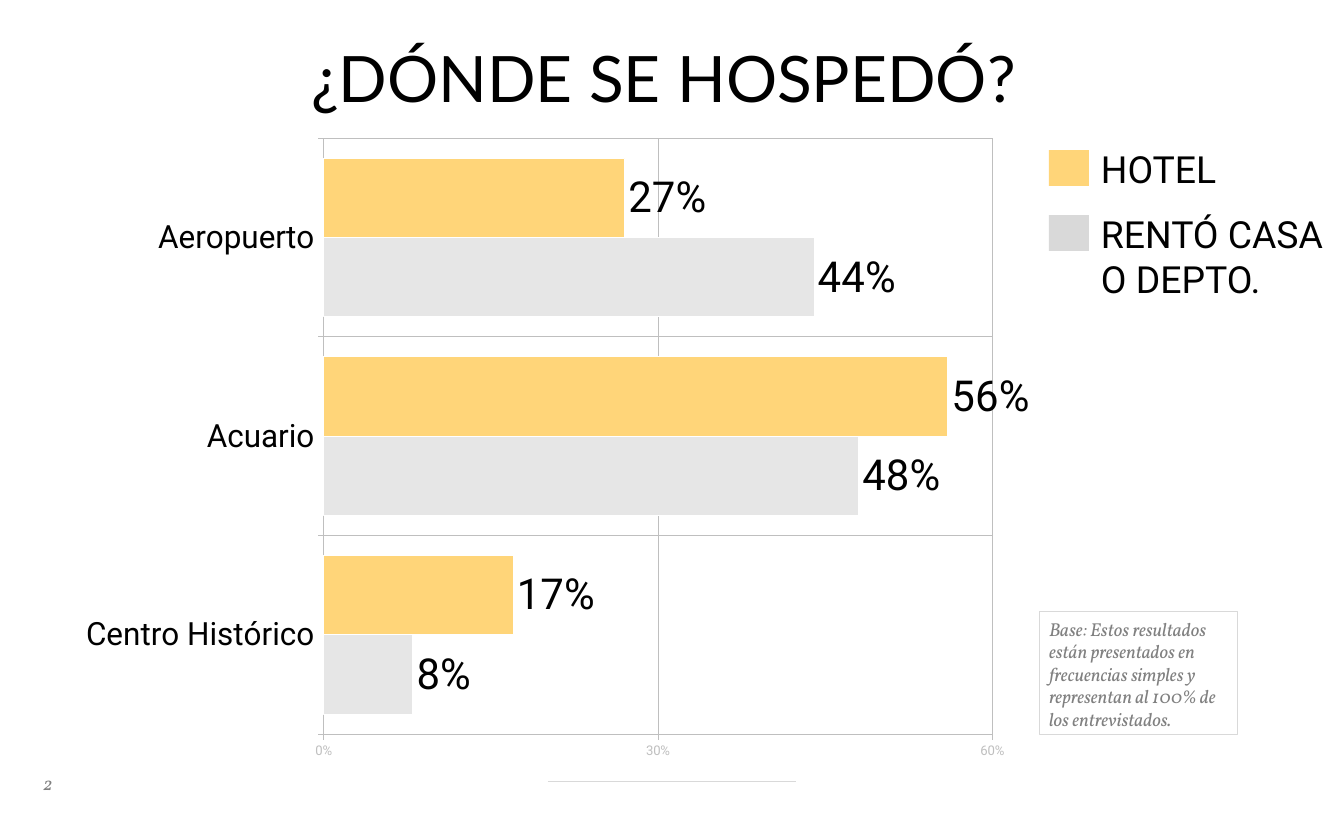
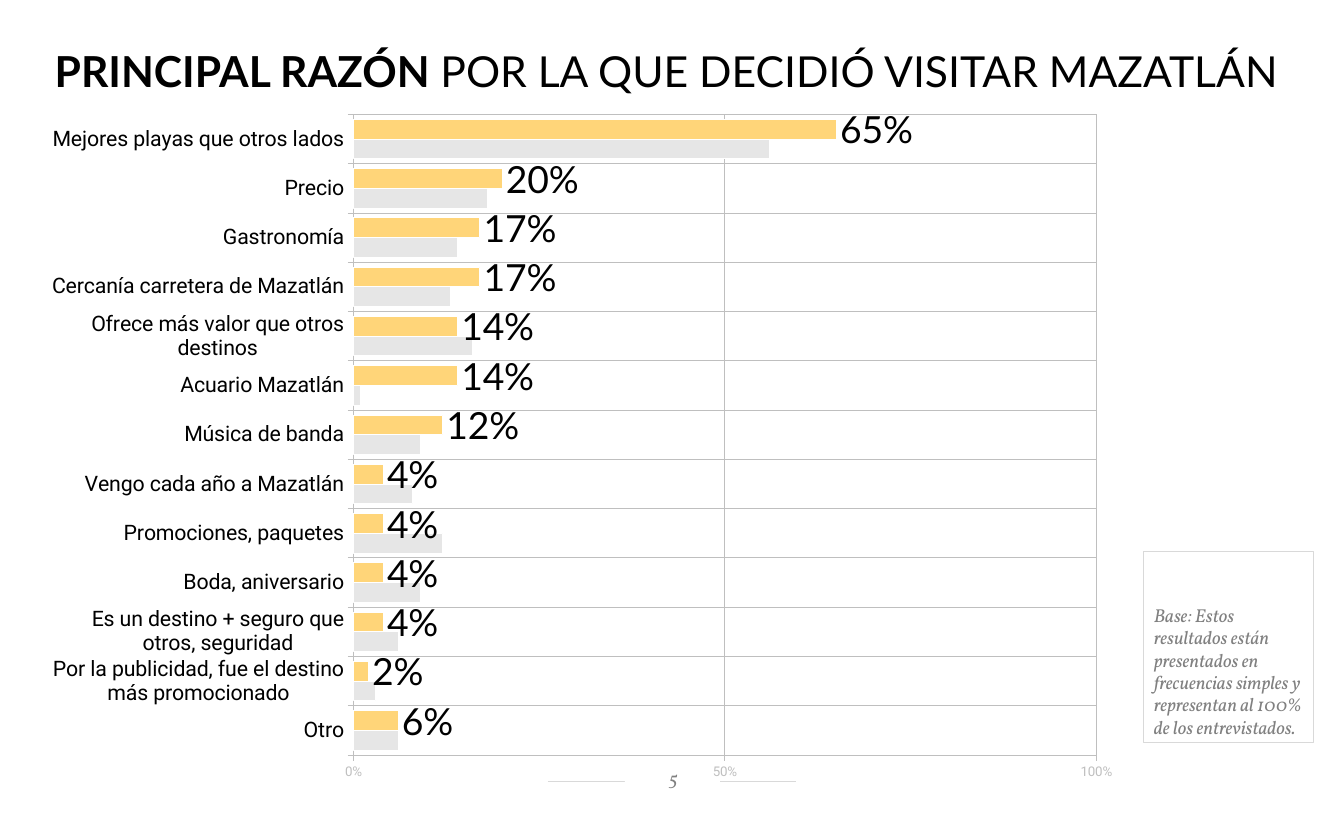
from collections import namedtuple
from dataclasses import dataclass

from lxml.etree import SubElement
from pptx import Presentation
from pptx.chart.data import CategoryChartData as Data
from pptx.dml.color import RGBColor as RGB
from pptx.enum.chart import XL_CHART_TYPE as Kind
from pptx.enum.chart import XL_LABEL_POSITION as Spot
from pptx.enum.chart import XL_TICK_LABEL_POSITION as Side
from pptx.enum.chart import XL_TICK_MARK as Tick
from pptx.enum.shapes import MSO_CONNECTOR as Wire
from pptx.enum.shapes import MSO_SHAPE as Form
from pptx.enum.text import MSO_ANCHOR as Anchor
from pptx.enum.text import MSO_AUTO_SIZE as Fit
from pptx.enum.text import PP_ALIGN as Align
from pptx.oxml.ns import qn
from pptx.util import Emu, Pt

PX = 9525
Box = namedtuple("Box", "x y w h")


@dataclass(frozen=True)
class Theme:
    """Colours, fonts and type sizes of the deck."""
    ink: str = "000000"
    white: str = "FFFFFF"
    gold: str = "FFD579"
    pale: str = "E6E6E6"
    rule: str = "D9D9D9"
    grid: str = "BFBFBF"
    mute: str = "808080"
    head: str = "Lato"
    body: str = "Roboto"
    serif: str = "Vollkorn"
    small: int = 14
    key: int = 28
    axis: int = 10


T = Theme()
PLOT = {"x": 0.288, "y": 0.027, "w": 0.691, "h": 0.934}
PAD = (10, 5, 10, 5)
NOTE = ("Base: Estos resultados están presentados en frecuencias simples "
        "y representan al 100% de los entrevistados.")
STAYS = {
    "Centro Histórico": (0.08, 0.17),
    "Acuario": (0.48, 0.56),
    "Aeropuerto": (0.44, 0.27),
}
REASONS = {
    "Otro": (0.06, 0.06),
    "Por la publicidad, fue el destino más promocionado": (0.03, 0.02),
    "Es un destino + seguro que otros, seguridad": (0.06, 0.04),
    "Boda, aniversario": (0.09, 0.04),
    "Promociones, paquetes": (0.12, 0.04),
    "Vengo cada año a Mazatlán": (0.08, 0.04),
    "Música de banda": (0.09, 0.12),
    "Acuario Mazatlán": (0.01, 0.14),
    "Ofrece más valor que otros destinos": (0.16, 0.14),
    "Cercanía carretera de Mazatlán": (0.13, 0.17),
    "Gastronomía": (0.14, 0.17),
    "Precio": (0.18, 0.2),
    "Mejores playas que otros lados": (0.56, 0.65),
}


def put(item, **vals):
    """Set each named attribute on an object."""
    for name, val in vals.items():
        setattr(item, name, val)


def px(*nums):
    """Turn pixels into EMU."""
    return [Emu(round(num * PX)) for num in nums]


def ink(font, size, face, color=T.ink, **more):
    """Format a font."""
    put(font, size=Pt(size), name=face, **more)
    font.color.rgb = RGB.from_string(color)


def edge(line, color, width=0.75):
    """Give a line its colour and width."""
    line.color.rgb = RGB.from_string(color)
    line.width = Pt(width)


def block(slide, box, fill=None, line=None):
    """Add a flat rectangle."""
    shape = slide.shapes.add_shape(Form.RECTANGLE, *px(*box))
    shape.shadow.inherit = False
    if fill:
        shape.fill.solid()
        shape.fill.fore_color.rgb = RGB.from_string(fill)
    else:
        shape.fill.background()
    if line:
        edge(shape.line, line)
    else:
        shape.line.fill.background()
    return shape


def write(shape, runs, look, align=Align.LEFT, anchor=Anchor.TOP,
          pad=PAD, fit=Fit.SHAPE_TO_FIT_TEXT, lead=None):
    """Fill a shape with one paragraph of (text, bold) runs."""
    left, top, right, low = px(*pad)
    frame = shape.text_frame
    put(frame, word_wrap=True, auto_size=fit, vertical_anchor=anchor,
        margin_left=left, margin_top=top, margin_right=right,
        margin_bottom=low)
    para = frame.paragraphs[0]
    put(para, alignment=align, line_spacing=lead)
    for text, bold in runs:
        run = para.add_run()
        run.text = text
        ink(run.font, bold=bold, **look)


def label(slide, box, runs, look, **more):
    """Add a text box."""
    write(slide.shapes.add_textbox(*px(*box)), runs, look, **more)


def title(slide, box, runs, size, **more):
    """Add a centred heading."""
    label(slide, box, runs, {"size": size, "face": T.head},
          align=Align.CENTER, **more)


def aside(slide, box, text, fill=None, line=None, **more):
    """Add a box of small grey italics."""
    look = {"size": T.small, "face": T.serif, "color": T.mute,
            "italic": True}
    write(block(slide, box, fill, line), [(text, False)], look, **more)


def note(slide, box):
    """Add the framed note on the base of the survey."""
    aside(slide, box, NOTE, line=T.rule, anchor=Anchor.BOTTOM)


def foot(slide, box, num):
    """Add the footer rule and the page number."""
    wire = slide.shapes.add_connector(Wire.STRAIGHT, *px(548, 781, 796, 781))
    edge(wire.line, T.rule, 0.5)
    SubElement(wire._element.spPr, qn("a:effectLst"))
    aside(slide, box, num, fill=T.white, align=Align.CENTER,
          anchor=Anchor.MIDDLE, pad=(12, 2, 10, 5), fit=Fit.NONE)


def legend(slide, box, names):
    """Add a column of swatches with their names."""
    step = box.h // len(names)
    for row, (name, color) in enumerate(names):
        top = box.y + row * step
        label(slide, Box(box.x + 42, top, box.w - 42, 55), [(name, False)],
              {"size": T.key, "face": T.body})
        block(slide, Box(box.x, top + 9, 40, 36), color)


def frame(chart):
    """Fix the inner plot area and clear the chart's background."""
    area = chart._chartSpace.chart.plotArea
    for old in area.findall(qn("c:layout")):
        area.remove(old)
    outer = SubElement(area, qn("c:layout"))
    area.insert(0, outer)
    inner = SubElement(outer, qn("c:manualLayout"))
    vals = {"layoutTarget": "inner", "xMode": "edge", "yMode": "edge", **PLOT}
    for name, val in vals.items():
        SubElement(inner, qn(f"c:{name}")).set("val", str(val))
    back = SubElement(chart._chartSpace, qn("c:spPr"))
    SubElement(back, qn("a:noFill"))
    SubElement(SubElement(back, qn("a:ln")), qn("a:noFill"))
    chart._chartSpace.chart.addnext(back)


def bars(slide, box, rows, top, step, size, tags):
    """Add a bar chart; tags maps a series number to its label font."""
    data = Data(number_format="0%")
    data.categories = list(rows)
    for num, vals in enumerate(zip(*rows.values()), 1):
        data.add_series(f"Series {num}", vals)
    chart = slide.shapes.add_chart(Kind.BAR_CLUSTERED, *px(*box), data).chart
    frame(chart)
    put(chart, has_legend=False, has_title=False)
    ink(chart.font, T.axis, T.body)

    for axis in (chart.category_axis, chart.value_axis):
        put(axis, has_major_gridlines=True, major_tick_mark=Tick.OUTSIDE,
            minor_tick_mark=Tick.NONE)
        edge(axis.format.line, T.grid)
        edge(axis.major_gridlines.format.line, T.grid)
    ink(chart.category_axis.tick_labels.font, size, T.body)
    scale = chart.value_axis
    put(scale, minimum_scale=0, maximum_scale=top, major_unit=step,
        tick_label_position=Side.LOW)
    put(scale.tick_labels, number_format="0%", number_format_is_linked=False)
    ink(scale.tick_labels.font, T.axis, T.body, T.grid)

    plot = chart.plots[0]
    put(plot, gap_width=50, vary_by_categories=False)
    for num, (series, color) in enumerate(zip(plot.series, (T.pale, T.gold))):
        series.format.fill.solid()
        series.format.fill.fore_color.rgb = RGB.from_string(color)
        edge(series.format.line, T.white)
        if num in tags:
            put(series.data_labels, show_value=True, number_format="0%",
                number_format_is_linked=False, position=Spot.OUTSIDE_END)
            ink(series.data_labels.font, **tags[num])


def stay(slide):
    """Build the slide on where visitors stayed."""
    foot(slide, Box(0, 772, 94, 25), "2")
    note(slide, Box(1039, 612, 199, 123))
    title(slide, Box(0, 46, 1344, 75), [("¿DÓNDE SE HOSPEDÓ? ", False)], 48,
          pad=(13, 7, 13, 7), lead=0.8)
    tag = {"size": 32, "face": T.body}
    bars(slide, Box(45, 121, 985, 638), STAYS, 0.6, 0.3, 24, {0: tag, 1: tag})
    legend(slide, Box(1049, 141, 287, 130),
           [("HOTEL", T.gold), ("RENTÓ CASA O DEPTO.", T.rule)])


def reason(slide):
    """Build the slide on the main reason for the visit."""
    foot(slide, Box(625, 766, 95, 28), "5")
    title(slide, Box(0, 36, 1344, 69),
          [("PRINCIPAL RAZÓN ", True),
           ("POR LA QUE DECIDIÓ VISITAR MAZATLÁN ", False)], 32,
          anchor=Anchor.MIDDLE, fit=Fit.NONE)
    note(slide, Box(1144, 552, 170, 191))
    bars(slide, Box(44, 96, 1075, 686), REASONS, 1, 0.5, 16,
         {1: {"size": 28, "face": T.head}})


def main():
    """Build and save the deck."""
    deck = Presentation()
    wide, high = px(1344, 816)
    put(deck, slide_width=wide, slide_height=high)
    for build in (stay, reason):
        build(deck.slides.add_slide(deck.slide_layouts[6]))
    deck.save("out.pptx")


if __name__ == "__main__":
    main()
